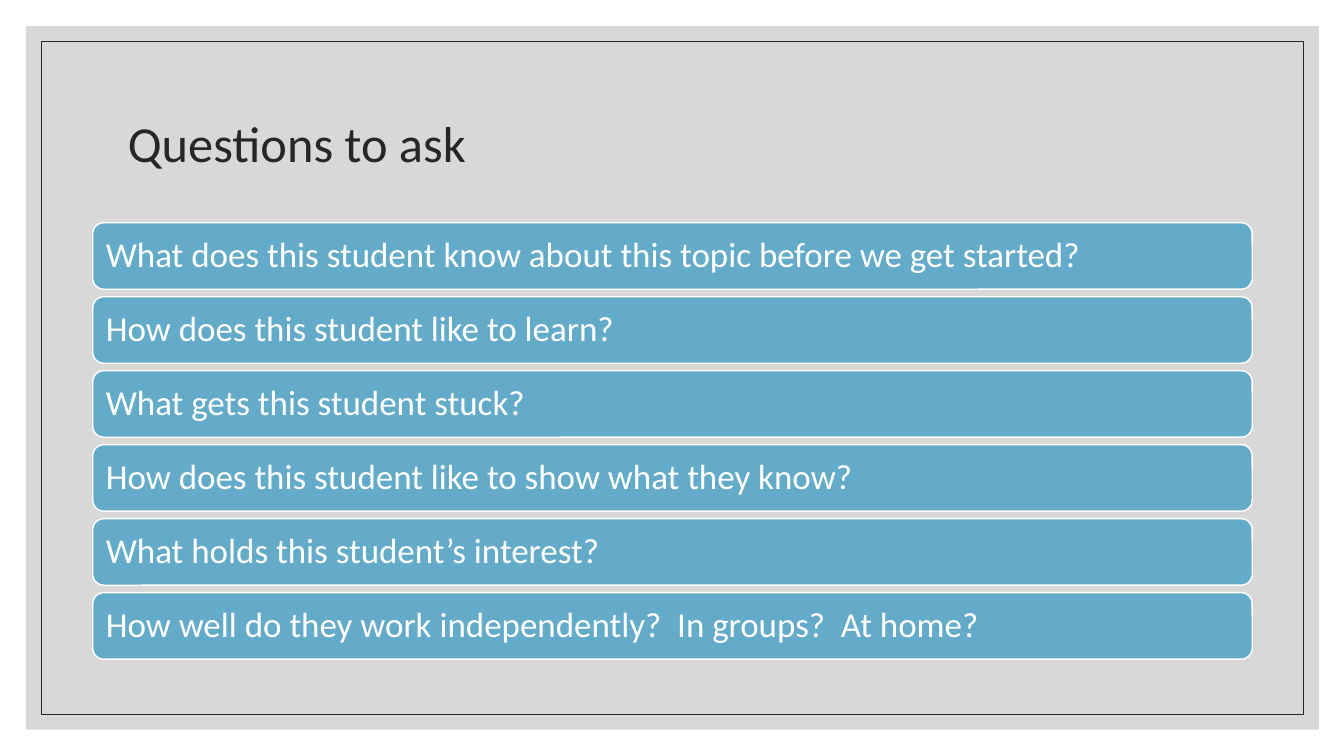
from lxml import etree
from pptx import Presentation
from pptx.dml.color import RGBColor
from pptx.enum.shapes import MSO_SHAPE
from pptx.enum.text import MSO_ANCHOR, PP_ALIGN
from pptx.oxml.ns import qn
from pptx.util import Pt

TITLE = "Questions to ask"
ASKS = [
    "What does this student know about this topic before we get started?",
    "How does this student like to learn?",
    "What gets this student stuck?",
    "How does this student like to show what they know?",
    "What holds this student’s interest?",
    "How well do they work independently?  In groups?  At home?",
]

RECT, ROUND = MSO_SHAPE.RECTANGLE, MSO_SHAPE.ROUNDED_RECTANGLE
MIDDLE, LEFT = MSO_ANCHOR.MIDDLE, PP_ALIGN.LEFT
GREY = RGBColor(0xBF, 0xBF, 0xBF)
DARK = RGBColor(0x26, 0x26, 0x26)
BLUE = RGBColor(0x63, 0xAB, 0xC9)
WHITE = RGBColor(0xFF, 0xFF, 0xFF)

PX = 9144  # 100 px to the inch
WIDE, HIGH = 1333, 750
PANEL = (26, 26, 1282, 698)
FRAME = (41, 41, 1252, 668)
HEAD = (117, 70, 1100, 150)
LIST = (92, 221, 1150, 433)
BAR = 66
PAD = 10


def scale(box):
    return [round(n * PX) for n in box]


def draw(slide, kind, box, fill=None, line=None, width=1):
    shape = slide.shapes.add_shape(kind, *scale(box))
    shape.shadow.inherit = False
    if fill is None:
        shape.fill.background()
    else:
        shape.fill.solid()
        shape.fill.fore_color.rgb = fill
    if line is None:
        shape.line.fill.background()
    else:
        shape.line.color.rgb = line
        shape.line.width = Pt(width)
    return shape


def write(shape, text, size, color, **frame):
    body = shape.text_frame
    for key, value in {"word_wrap": True, "vertical_anchor": MIDDLE, **frame}.items():
        setattr(body, key, value)
    para = body.paragraphs[0]
    para.alignment, para.line_spacing = LEFT, 0.9
    run = para.add_run()
    run.text = text
    run.font.color.rgb = color
    for key, value in {"name": "Calibri", "size": Pt(size)}.items():
        setattr(run.font, key, value)


def fade(shape, share):
    """Set the opacity of a solid fill, in percent."""
    tint = shape.fill._xPr.find(qn("a:solidFill"))[0]
    etree.SubElement(tint, qn("a:alpha")).set("val", str(share * 1000))


def main():
    deck = Presentation()
    deck.slide_width, deck.slide_height = scale((WIDE, HIGH))
    slide = deck.slides.add_slide(deck.slide_layouts[6])

    fade(draw(slide, RECT, PANEL, fill=GREY), 60)
    draw(slide, RECT, FRAME, line=DARK, width=0.5)
    write(slide.shapes.add_textbox(*scale(HEAD)), TITLE, 36, DARK)

    left, top, width, height = LIST
    step = (height - BAR) / (len(ASKS) - 1)
    sides = ("left", "top", "right", "bottom")
    pads = {f"margin_{side}": PAD * PX for side in sides}
    for i, ask in enumerate(ASKS):
        box = (left, top + i * step, width, BAR)
        bar = draw(slide, ROUND, box, fill=BLUE, line=WHITE)
        write(bar, ask, 25, WHITE, **pads)

    deck.save("out.pptx")


if __name__ == "__main__":
    main()
